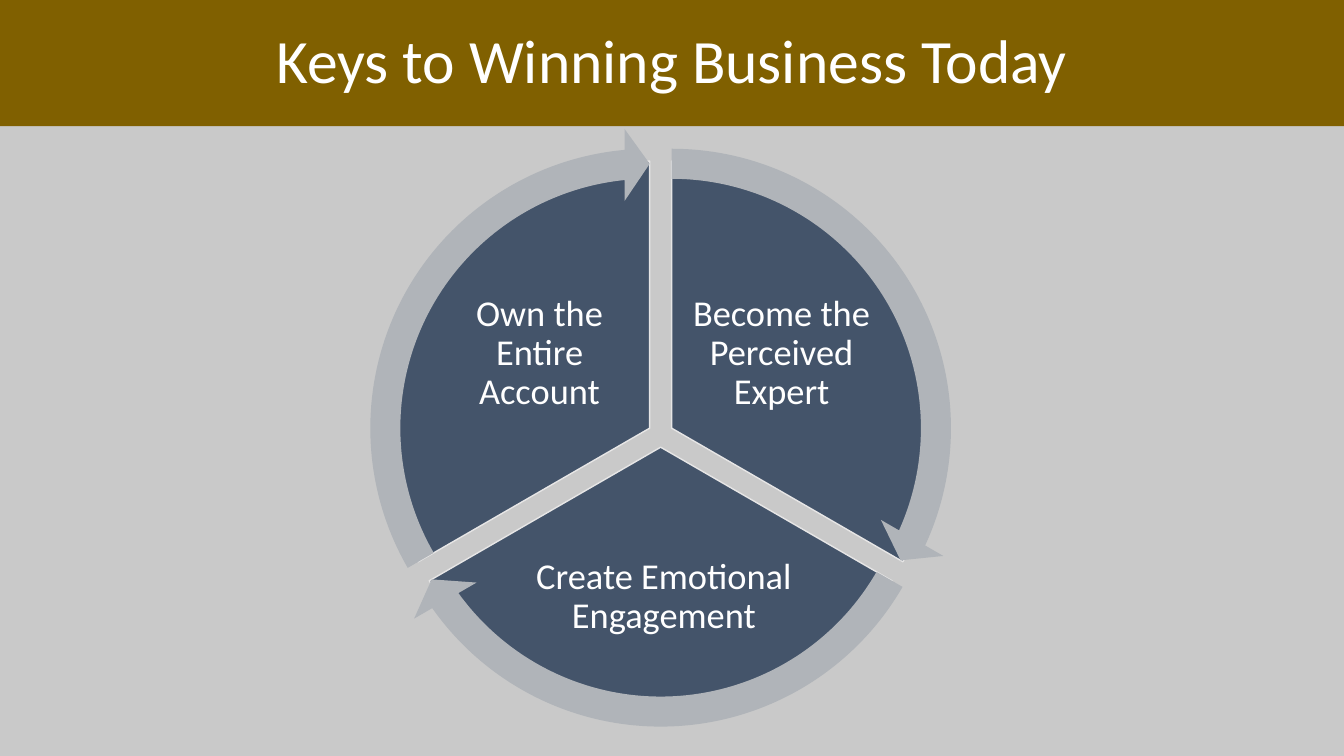
from math import cos, radians, sin

from pptx import Presentation
from pptx.dml.color import RGBColor
from pptx.enum.shapes import MSO_SHAPE
from pptx.enum.text import MSO_ANCHOR, PP_ALIGN
from pptx.util import Cm, Pt

RECT = MSO_SHAPE.RECTANGLE
PIE = MSO_SHAPE.PIE
ARROW = MSO_SHAPE.CIRCULAR_ARROW
MIDDLE = MSO_ANCHOR.MIDDLE
CENTER = PP_ALIGN.CENTER

GRAY = RGBColor(0xC9, 0xC9, 0xC9)
GOLD = RGBColor(0x80, 0x60, 0x00)
NAVY = RGBColor(0x44, 0x54, 0x6A)
PALE = RGBColor(0xE7, 0xE6, 0xE6)
STEEL = RGBColor(0xB0, 0xB4, 0xB9)
WHITE = RGBColor(0xFF, 0xFF, 0xFF)

MID_X, MID_Y = 16.65, 10.95
SHIFT = 0.32
PIE_SIZE = 13.46
RING_SIZE = 15.14

KEYS = [
    ("Become the Perceived Expert", (17.3, 6.91, 4.8, 4.01), 162, 18, 14.72),
    ("Create Emotional Engagement", (13.13, 13.28, 7.21, 3.53), 18, 90, 86.72),
    ("Own the Entire Account", (11.2, 6.91, 4.8, 4.01), 90, 162, 158.73),
]


class Deck:
    font = "Calibri"

    def __init__(self, slide):
        self.slide = slide

    def shape(self, kind, box, fill, line=None, adjust=()):
        item = self.slide.shapes.add_shape(kind, *map(Cm, box))
        item.shadow.inherit = False
        item.fill.solid()
        item.fill.fore_color.rgb = fill
        if line is None:
            item.line.fill.background()
        else:
            item.line.color.rgb = line
            item.line.width = Pt(1)
        for spot, value in enumerate(adjust):
            item.adjustments[spot] = value
        return item

    def words(self, frame, text, size):
        frame.word_wrap = True
        frame.vertical_anchor = MIDDLE
        para = frame.paragraphs[0]
        para.alignment = CENTER
        para.line_spacing = 0.9
        run = para.add_run()
        run.text = text
        run.font.name = self.font
        run.font.size = Pt(size)
        run.font.color.rgb = WHITE

    def label(self, box, text):
        frame = self.slide.shapes.add_textbox(*map(Cm, box)).text_frame
        frame.margin_left = frame.margin_right = Cm(0.1)
        frame.margin_top = frame.margin_bottom = Cm(0.1)
        self.words(frame, text, 26)

    def banner(self, box, text):
        bar = self.shape(RECT, box, GOLD)
        self.words(bar.text_frame, text, 44)


def disc(turn, size):
    angle = radians(120 * turn - 30)
    left = MID_X + SHIFT * cos(angle) - size / 2
    top = MID_Y + SHIFT * sin(angle) - size / 2
    return left, top, size, size


def main():
    show = Presentation()
    show.slide_width, show.slide_height = Cm(33.87), Cm(19.05)
    slide = show.slides.add_slide(show.slide_layouts[6])
    slide.background.fill.solid()
    slide.background.fill.fore_color.rgb = GRAY
    deck = Deck(slide)

    for turn, (text, box, start, end, tip) in enumerate(KEYS):
        deck.shape(PIE, disc(turn, PIE_SIZE), NAVY, PALE, (start, end))
        deck.label(box, text)
    for turn, (text, box, start, end, tip) in enumerate(KEYS):
        bend = (0.05, 3.28, tip, start, 0.06)
        deck.shape(ARROW, disc(turn, RING_SIZE), STEEL, adjust=bend)
    deck.banner((0, 0, 33.87, 3.18), "Keys to Winning Business Today")

    show.save("out.pptx")


if __name__ == "__main__":
    main()
